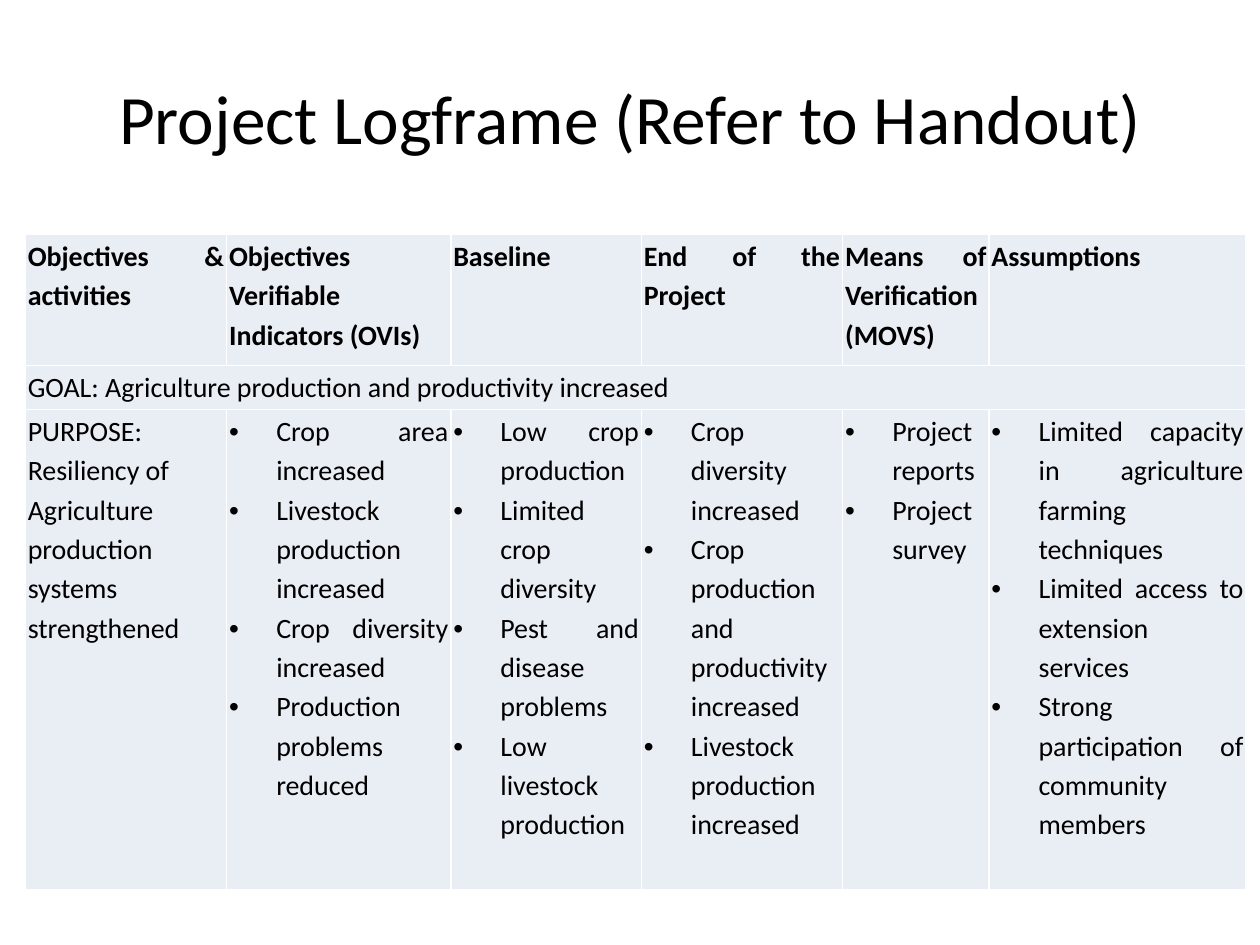
"""Build the project logframe slide with its title and table."""
from dataclasses import dataclass

from lxml.etree import SubElement
from pptx import Presentation
from pptx.dml.color import RGBColor
from pptx.enum.text import MSO_ANCHOR, PP_ALIGN
from pptx.oxml import parse_xml
from pptx.oxml.ns import nsdecls, qn
from pptx.table import _Cell
from pptx.text.text import TextFrame, _Paragraph
from pptx.util import Cm, Pt

FONT = "Calibri"
BLACK, WHITE, PALE_BLUE = "000000", "FFFFFF", "E9EDF4"


@dataclass(frozen=True)
class Column:
    width: float
    heading: str
    items: tuple[str, ...]
    bulleted: bool = True


COLUMNS = (
    Column(4.06, "Objectives & activities",
           ("PURPOSE:", "Resiliency of Agriculture production systems strengthened"),
           bulleted=False),
    Column(4.52, "Objectives Verifiable Indicators (OVIs)",
           ("Crop area increased", "Livestock production increased",
            "Crop diversity increased", "Production problems reduced")),
    Column(3.84, "Baseline",
           ("Low crop production", "Limited crop diversity",
            "Pest and disease problems", "Low livestock production")),
    Column(4.06, "End of the Project",
           ("Crop diversity increased", "Crop production and productivity increased",
            "Livestock production increased")),
    Column(2.95, "Means of Verification (MOVS)",
           ("Project reports", "Project survey")),
    Column(5.18, "Assumptions",
           ("Limited capacity in agriculture farming techniques",
            "Limited access to extension services",
            "Strong participation of community members")),
)
ROW_HEIGHTS = (2.64, 0.89, 9.68)
GOAL = "GOAL: Agriculture production and productivity increased"


def color(value: str) -> RGBColor:
    return RGBColor.from_string(value)


def add_bullet(para: _Paragraph) -> None:
    properties = para._p.get_or_add_pPr()
    properties.set("marL", str(Cm(0.95)))
    properties.set("indent", str(-Cm(0.95)))
    SubElement(properties, qn("a:buFont"), typeface="Arial")
    SubElement(properties, qn("a:buChar"), char="•")


def write(frame: TextFrame, *lines: str, size: float = 16, bold: bool = False,
          align: PP_ALIGN = PP_ALIGN.JUSTIFY, spacing: float = 1.15,
          bulleted: bool = False) -> None:
    for index, line in enumerate(lines):
        para = frame.add_paragraph() if index else frame.paragraphs[0]
        para.alignment = align
        para.line_spacing = spacing
        if bulleted:
            add_bullet(para)
        span = para.add_run()
        span.text = line
        span.font.name = FONT
        span.font.size = Pt(size)
        span.font.bold = bold
        span.font.color.rgb = color(BLACK)


def format_cell(cell: _Cell) -> None:
    cell.margin_left = cell.margin_right = Cm(0.05)
    cell.margin_top = cell.margin_bottom = 0
    cell.fill.solid()
    cell.fill.fore_color.rgb = color(PALE_BLUE)
    properties = cell._tc.get_or_add_tcPr()
    for index, side in enumerate(("lnL", "lnR", "lnT", "lnB")):
        properties.insert(index, parse_xml(
            f'<a:{side} {nsdecls("a")} w="{Pt(1)}"><a:solidFill>'
            f'<a:srgbClr val="{WHITE}"/></a:solidFill></a:{side}>'))


def main() -> None:
    deck = Presentation()
    deck.slide_width, deck.slide_height = Cm(25.4), Cm(19.05)
    page = deck.slides.add_slide(deck.slide_layouts[5])

    title = page.shapes.title
    title.left, title.top = Cm(1.27), Cm(0.76)
    title.width, title.height = Cm(22.86), Cm(3.18)
    title.text_frame.vertical_anchor = MSO_ANCHOR.MIDDLE
    write(title.text_frame, "Project Logframe (Refer to Handout)",
          size=39.6, align=PP_ALIGN.CENTER, spacing=1.0)

    table = page.shapes.add_table(
        len(ROW_HEIGHTS), len(COLUMNS), Cm(0.51), Cm(4.73),
        Cm(sum(column.width for column in COLUMNS)), Cm(sum(ROW_HEIGHTS))).table
    table.horz_banding = False
    for row, height in zip(table.rows, ROW_HEIGHTS):
        row.height = Cm(height)
    for cell in table.iter_cells():
        format_cell(cell)

    for index, column in enumerate(COLUMNS):
        table.columns[index].width = Cm(column.width)
        write(table.cell(0, index).text_frame, column.heading, bold=True)
        write(table.cell(2, index).text_frame, *column.items, bulleted=column.bulleted)
    table.cell(2, 0).text_frame.paragraphs[-1].alignment = PP_ALIGN.LEFT

    goal = table.cell(1, 0)
    goal.merge(table.cell(1, len(COLUMNS) - 1))
    write(goal.text_frame, GOAL)

    deck.save("out.pptx")


if __name__ == "__main__":
    main()
